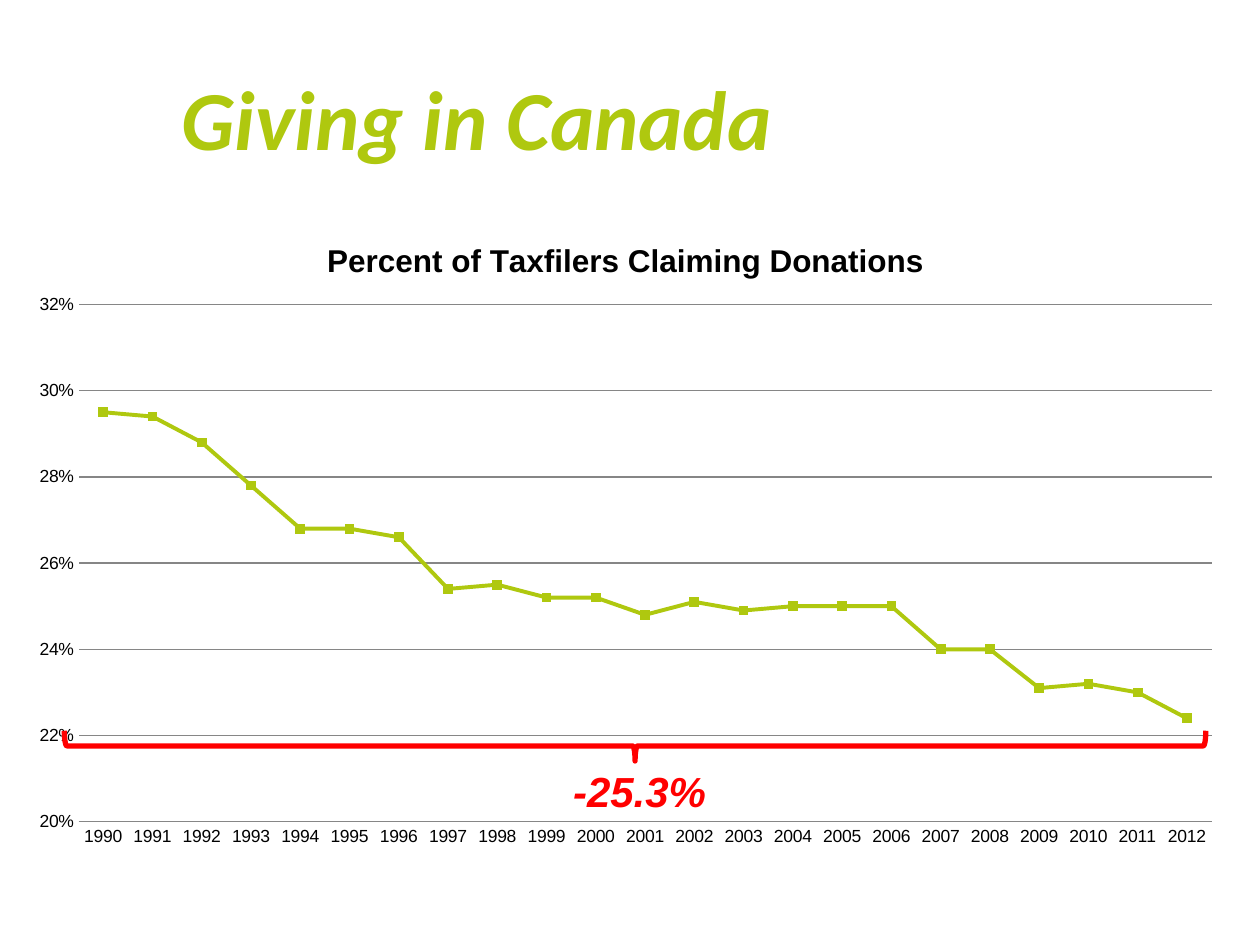
from pptx import Presentation
from pptx.chart.data import CategoryChartData
from pptx.dml.color import RGBColor
from pptx.enum.chart import XL_CHART_TYPE, XL_MARKER_STYLE, XL_TICK_MARK
from pptx.enum.shapes import MSO_SHAPE
from pptx.enum.text import MSO_ANCHOR
from pptx.oxml import parse_xml
from pptx.oxml.ns import nsdecls, qn
from pptx.util import Inches, Pt

LINE = XL_CHART_TYPE.LINE_MARKERS
SQUARE = XL_MARKER_STYLE.SQUARE
NO_TICK = XL_TICK_MARK.NONE
BRACE = MSO_SHAPE.RIGHT_BRACE
MIDDLE = MSO_ANCHOR.MIDDLE
TOP = MSO_ANCHOR.TOP

INK = {name: RGBColor.from_string(code) for name, code in {
    "lime": "AFC80F", "red": "FF0000", "black": "000000", "grey": "868686",
}.items()}

deck = Presentation()
deck.slide_width = Inches(10)
deck.slide_height = Inches(7.5)
slide = deck.slides.add_slide(deck.slide_layouts[6])
shapes = slide.shapes


def place(*box):
    return [Inches(size) for size in box]


def style(font, face, size, color, slant=False):
    font.name = face
    font.size = Pt(size)
    font.color.rgb = INK[color]
    font.bold = True
    font.italic = slant


rates = [29.5, 29.4, 28.8, 27.8, 26.8, 26.8, 26.6, 25.4, 25.5, 25.2, 25.2, 24.8,
         25.1, 24.9, 25, 25, 25, 24, 24, 23.1, 23.2, 23, 22.4]
data = CategoryChartData(number_format="0%")
data.categories = [str(1990 + step) for step in range(len(rates))]
data.add_series("Series 1", [round(rate / 100, 3) for rate in rates])

chart = shapes.add_chart(LINE, *place(0.12, 1.7, 9.69, 5.12), data).chart
chart.has_legend = False
chart.font.name = "Arial"
chart.font.size = Pt(10)
chart.font.color.rgb = INK["black"]
chart.has_title = True
head = chart.chart_title.text_frame
head.text = "Percent of Taxfilers Claiming Donations"
style(head.paragraphs[0].runs[0].font, "Arial", 18, "black")

years = chart.category_axis
years.major_tick_mark = NO_TICK
years.format.line.color.rgb = INK["grey"]

scale = chart.value_axis
scale.minimum_scale = 0.2
scale.maximum_scale = 0.32
scale.major_unit = 0.02
scale.major_tick_mark = NO_TICK
scale.format.line.fill.background()
scale.has_major_gridlines = True
scale.major_gridlines.format.line.color.rgb = INK["grey"]
scale.tick_labels.number_format = "0%"
scale.tick_labels.number_format_is_linked = False

trend = chart.plots[0].series[0]
chart.plots[0].vary_by_categories = False
trend.smooth = False
trend.format.line.color.rgb = INK["lime"]
trend.format.line.width = Pt(2.25)
trend.marker.style = SQUARE
trend.marker.size = 5
trend.marker.format.fill.solid()
trend.marker.format.fill.fore_color.rgb = INK["lime"]
trend.marker.format.line.color.rgb = INK["lime"]

area = chart.plots[0]._element.getparent()
for old in area.findall(qn("c:layout")):
    area.remove(old)
area.insert(0, parse_xml(
    f'<c:layout {nsdecls("c")}><c:manualLayout><c:layoutTarget val="inner"/>'
    '<c:xMode val="edge"/><c:yMode val="edge"/><c:x val="0.052"/><c:y val="0.14"/>'
    '<c:w val="0.928"/><c:h val="0.802"/></c:manualLayout></c:layout>'))

brace = shapes.add_shape(BRACE, *place(4.92, 1.39, 0.24, 9.06))
brace.rotation = 90
brace.adjustments[0] = 0.083
brace.shadow.inherit = False
brace.fill.background()
brace.line.color.rgb = INK["red"]
brace.line.width = Pt(3)

for text, box, face, size, color, wrap, anchor in [
    ("Giving in Canada", (1.34, 0.3, 8.66, 1.25), "Calibri", 48, "lime", True, MIDDLE),
    ("-25.3%", (4.45, 6.03, 1.27, 0.5), "Arial", 24, "red", False, TOP),
]:
    frame = shapes.add_textbox(*place(*box)).text_frame
    frame.word_wrap = wrap
    frame.vertical_anchor = anchor
    frame.text = text
    style(frame.paragraphs[0].runs[0].font, face, size, color, True)

deck.save("out.pptx")
